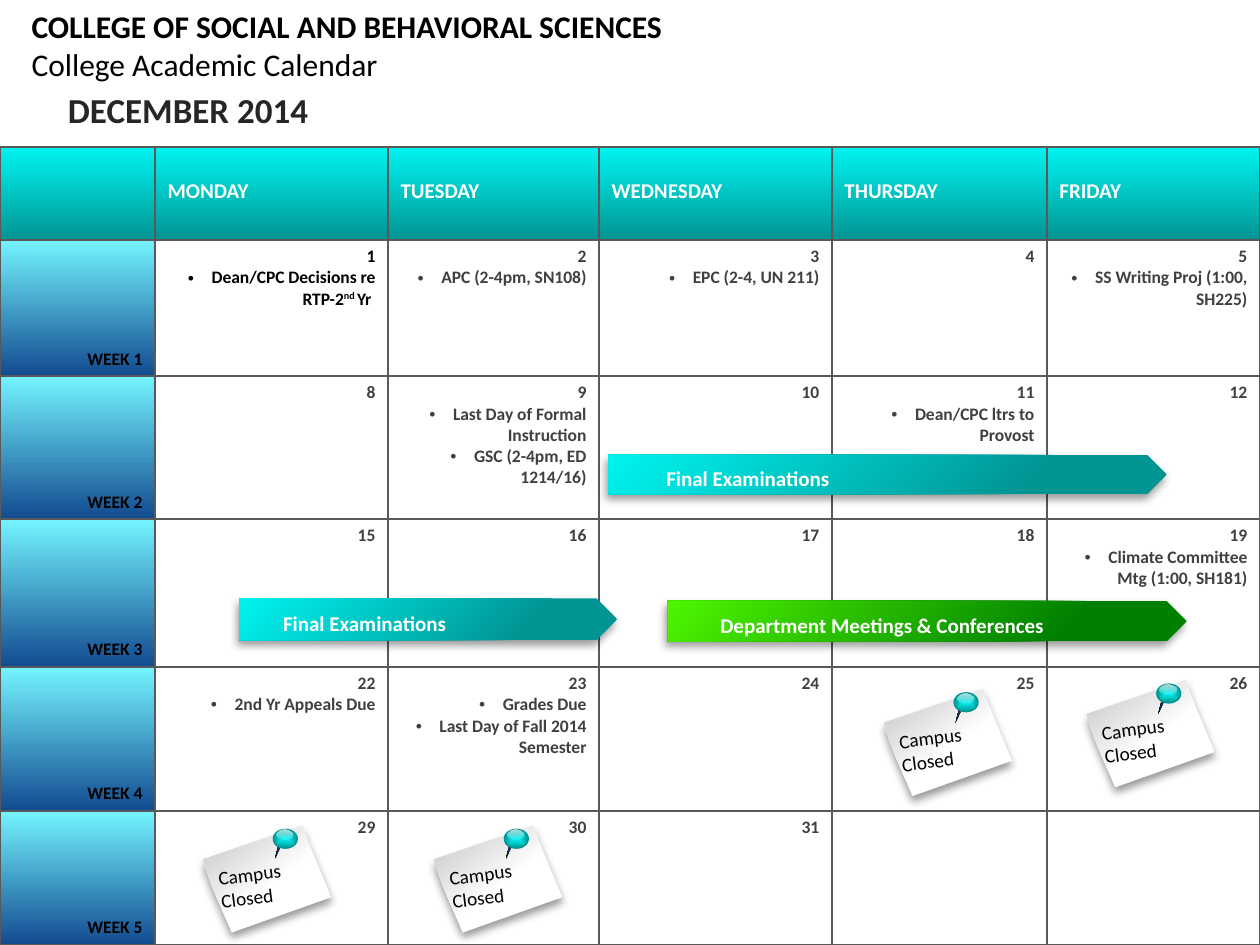
from pptx import Presentation
from pptx.dml.color import RGBColor
from pptx.enum.shapes import MSO_SHAPE as Shape
from pptx.enum.text import MSO_ANCHOR as Anchor, MSO_AUTO_SIZE as AutoSize, PP_ALIGN as Align
from pptx.oxml import parse_xml
from pptx.oxml.ns import nsdecls, qn
from pptx.util import Pt

COLORS = {
    "black": "000000", "white": "FFFFFF", "month": "262626", "text": "404040",
    "border": "595959", "aqua": "00F3F0", "teal": "009593", "sky": "74F4FF",
    "navy": "124B90", "lime": "4FF600", "green": "008000", "paper": "BFBFBF",
    "gloss": "FFFCF9", "needle_dark": "070D13", "needle": "376092",
}
COLUMN_WIDTHS = [88.6, 133.1, 120.6, 133.1, 122.9, 121.7]
ROW_HEIGHTS = [53.1, 77.8, 81.7, 84.5, 82.3, 76.6]
DAYS = ["", "MONDAY", "TUESDAY", "WEDNESDAY", "THURSDAY", "FRIDAY"]
WEEK_COUNT, LAST_DATE = 5, 31
EVENTS = {
    1: ["Dean/CPC Decisions re RTP-2^nd ^Yr "],
    2: ["APC (2-4pm, SN108)"],
    3: ["EPC (2-4, UN 211)"],
    5: ["SS Writing Proj (1:00, SH225)"],
    9: ["Last Day of Formal Instruction", "GSC (2-4pm, ED 1214/16)"],
    11: ["Dean/CPC ltrs to Provost"],
    19: ["Climate Committee Mtg (1:00, SH181)"],
    22: ["2nd Yr Appeals Due"],
    23: ["Grades Due", "Last Day of Fall 2014 Semester"],
}
NOTE_OUTLINE = [(58.5, 0), (59.8, 6.6), (69.7, 42.7), (10.7, 55.5),
                (2.7, 26.9), (0.4, 16.4), (0, 12)]
NEEDLE_OUTLINE = [(38.9, 16.6), (43.2, 7.2), (42.6, 6.5), (41.8, 6.5)]
CLOSED_NOTES = [(507, 396.6), (118, 474.6), (250, 474.6), (622.8, 391.6)]
RIBBONS = [
    ("Department Meetings & Conferences", 381.6, 343.4, 296.6, 23.2, 30, "green", "lime"),
    ("Final Examinations", 347.8, 260, 319, 22.3, 33, "teal", "aqua"),
    ("Final Examinations", 136.8, 342, 216, 23.8, 25, "teal", "aqua"),
]


class CalendarSlide:
    font = "Calibri"

    def __init__(self, presentation):
        self.slide = presentation.slides.add_slide(presentation.slide_layouts[5])

    def format_runs(self, paragraph, size, color, bold=False):
        for run in paragraph.runs:
            run.font.name = self.font
            run.font.size = Pt(size)
            run.font.bold = bold
            run.font.color.rgb = RGBColor.from_string(COLORS[color])

    def gradient(self, fill, properties, stops, angle=None):
        fill.gradient()
        stop_xml = "".join(
            f'<a:gs pos="{position * 1000}"><a:srgbClr val="{COLORS[color]}">'
            f'<a:alpha val="{opacity * 1000}"/></a:srgbClr></a:gs>'
            for position, color, opacity in stops)
        if angle is None:
            direction = ('<a:path path="shape"><a:fillToRect l="50000" t="50000" '
                         'r="50000" b="50000"/></a:path>')
        else:
            direction = f'<a:lin ang="{angle * 60000}" scaled="0"/>'
        properties.replace(properties.find(qn("a:gradFill")), parse_xml(
            f'<a:gradFill {nsdecls("a")} rotWithShape="1"><a:gsLst>{stop_xml}</a:gsLst>'
            f'{direction}</a:gradFill>'))

    def paint(self, shape, stops, angle=None, shadow_angle=None):
        properties = shape._element.spPr
        shape.shadow.inherit = False
        shape.line.fill.background()
        self.gradient(shape.fill, properties, stops, angle)
        if shadow_angle is not None:
            properties.find(qn("a:effectLst")).append(parse_xml(
                f'<a:outerShdw {nsdecls("a")} blurRad="{Pt(5)}" dist="{Pt(3)}" '
                f'dir="{shadow_angle * 60000}" algn="t" rotWithShape="0">'
                f'<a:srgbClr val="{COLORS["black"]}"><a:alpha val="40000"/></a:srgbClr>'
                '</a:outerShdw>'))

    def title(self, heading, subtitle):
        shape = self.slide.shapes.title
        shape.left, shape.top, shape.width, shape.height = Pt(18), Pt(3), Pt(380), Pt(45)
        frame = shape.text_frame
        frame.text = f"{heading}\n{subtitle}"
        frame.auto_size = AutoSize.NONE
        frame.vertical_anchor = Anchor.MIDDLE
        frame.margin_left = frame.margin_right = 0
        for paragraph, bold in zip(frame.paragraphs, (True, False)):
            paragraph.alignment = Align.LEFT
            self.format_runs(paragraph, 18, "black", bold)

    def month(self, text):
        shape = self.slide.shapes.add_textbox(Pt(31.7), Pt(46.8), Pt(153.4), Pt(31.7))
        shape.text_frame.word_wrap = False
        shape.text_frame.text = text
        self.format_runs(shape.text_frame.paragraphs[0], 20, "month", True)

    def borders(self, cell):
        properties = cell._tc.get_or_add_tcPr()
        for index, side in enumerate(("lnL", "lnR", "lnT", "lnB")):
            properties.insert(index, parse_xml(
                f'<a:{side} {nsdecls("a")} w="{Pt(1)}"><a:solidFill>'
                f'<a:srgbClr val="{COLORS["border"]}"/></a:solidFill></a:{side}>'))

    def label_cell(self, cell, text, size, color, start, end):
        cell.text = text
        self.format_runs(cell.text_frame.paragraphs[0], size, color, True)
        self.gradient(cell.fill, cell._tc.get_or_add_tcPr(),
                      [(0, start, 100), (100, end, 100)], 90)

    def event(self, paragraph, text):
        properties = paragraph._p.get_or_add_pPr()
        properties.set("marL", str(Pt(13.5)))
        properties.set("indent", str(-Pt(13.5)))
        properties.append(parse_xml(f'<a:buFont {nsdecls("a")} typeface="Arial"/>'))
        properties.append(parse_xml(f'<a:buChar {nsdecls("a")} char="•"/>'))
        for index, part in enumerate(text.split("^")):
            run = paragraph.add_run()
            run.text = part
            if index % 2:
                run._r.get_or_add_rPr().set("baseline", "30000")

    def date_cell(self, cell, date):
        cell.fill.solid()
        cell.fill.fore_color.rgb = RGBColor.from_string(COLORS["white"])
        if date > LAST_DATE:
            return
        frame = cell.text_frame
        frame.text = str(date)
        for text in EVENTS.get(date, []):
            self.event(frame.add_paragraph(), text)
        for paragraph in frame.paragraphs:
            paragraph.alignment = Align.RIGHT
            self.format_runs(paragraph, 10, "black" if date == 1 else "text", True)

    def calendar(self):
        table = self.slide.shapes.add_table(
            len(ROW_HEIGHTS), len(COLUMN_WIDTHS), 0, Pt(84), Pt(720), Pt(456)).table
        table.first_row = table.horz_banding = False
        for column, width in zip(table.columns, COLUMN_WIDTHS):
            column.width = Pt(width)
        for row, height in zip(table.rows, ROW_HEIGHTS):
            row.height = Pt(height)
        for index, day in enumerate(DAYS):
            cell = table.cell(0, index)
            self.label_cell(cell, day, 12, "white", "aqua", "teal")
            cell.margin_top = Pt(18.2)
        for week in range(1, WEEK_COUNT + 1):
            cell = table.cell(week, 0)
            self.label_cell(cell, f"WEEK {week}", 10, "black", "sky", "navy")
            cell.vertical_anchor = Anchor.BOTTOM
            cell.text_frame.paragraphs[0].alignment = Align.RIGHT
            for weekday in range(1, len(DAYS)):
                self.date_cell(table.cell(week, weekday), 7 * (week - 1) + weekday)
        for cell in table.iter_cells():
            self.borders(cell)

    def outline(self, shapes, points, left, top):
        corners = [(Pt(left + x), Pt(top + y)) for x, y in points]
        builder = shapes.build_freeform(*corners[0])
        builder.add_line_segments(corners[1:], close=True)
        return builder.convert_to_shape()

    def pinned_note(self, text, left, top):
        shapes = self.slide.shapes.add_group_shape().shapes
        note = self.outline(shapes, NOTE_OUTLINE, left, top)
        note.rotation = 352.7
        self.paint(note, [(45, "white", 100), (100, "paper", 100)], 240, 90)
        frame = note.text_frame
        frame.text = text
        frame.word_wrap = True
        frame.vertical_anchor = Anchor.TOP
        frame.margin_left, frame.margin_top = Pt(7.2), Pt(17)
        frame.margin_right = frame.margin_bottom = 0
        for paragraph in frame.paragraphs:
            paragraph.alignment = Align.LEFT
            self.format_runs(paragraph, 11, "black")

        needle = self.outline(shapes, NEEDLE_OUTLINE, left, top)
        self.paint(needle, [(0, "needle_dark", 100), (100, "needle", 100)], 0)
        head = shapes.add_shape(Shape.OVAL, Pt(left + 38.2), Pt(top - 0.7), Pt(13.7), Pt(10.8))
        self.paint(head, [(0, "aqua", 100), (100, "teal", 100)])
        head.line.color.rgb = RGBColor.from_string(COLORS["teal"])
        head.line.width = Pt(0.75)
        gloss = shapes.add_shape(Shape.OVAL, Pt(left + 40), Pt(top - 0.5), Pt(9.4), Pt(5.8))
        self.paint(gloss, [(0, "white", 0), (100, "gloss", 77)], 270)
        shade = shapes.add_shape(Shape.MOON, Pt(left + 42), Pt(top + 1.4), Pt(4.3), Pt(13))
        shade.rotation = 275.9
        shade.adjustments[0] = 0.08
        self.paint(shade, [(24, "black", 24), (100, "white", 0)])

    def ribbon(self, text, left, top, width, height, indent, start, end):
        shape = self.slide.shapes.add_shape(
            Shape.PENTAGON, Pt(left), Pt(top), Pt(width), Pt(height))
        self.paint(shape, [(24, start, 100), (100, end, 100)], 225, 120)
        frame = shape.text_frame
        frame.text = text
        frame.vertical_anchor = Anchor.MIDDLE
        frame.margin_left, frame.margin_top = Pt(indent), Pt(4)
        frame.margin_right = frame.margin_bottom = 0
        frame.paragraphs[0].alignment = Align.LEFT
        self.format_runs(frame.paragraphs[0], 12, "white", True)


def main():
    presentation = Presentation()
    presentation.slide_width, presentation.slide_height = Pt(720), Pt(540)
    calendar = CalendarSlide(presentation)
    calendar.title("COLLEGE OF SOCIAL AND BEHAVIORAL SCIENCES", "College Academic Calendar")
    calendar.calendar()
    calendar.month("DECEMBER 2014")
    for left, top in CLOSED_NOTES:
        calendar.pinned_note("Campus\nClosed", left, top)
    for ribbon in RIBBONS:
        calendar.ribbon(*ribbon)
    presentation.save("out.pptx")


if __name__ == "__main__":
    main()
